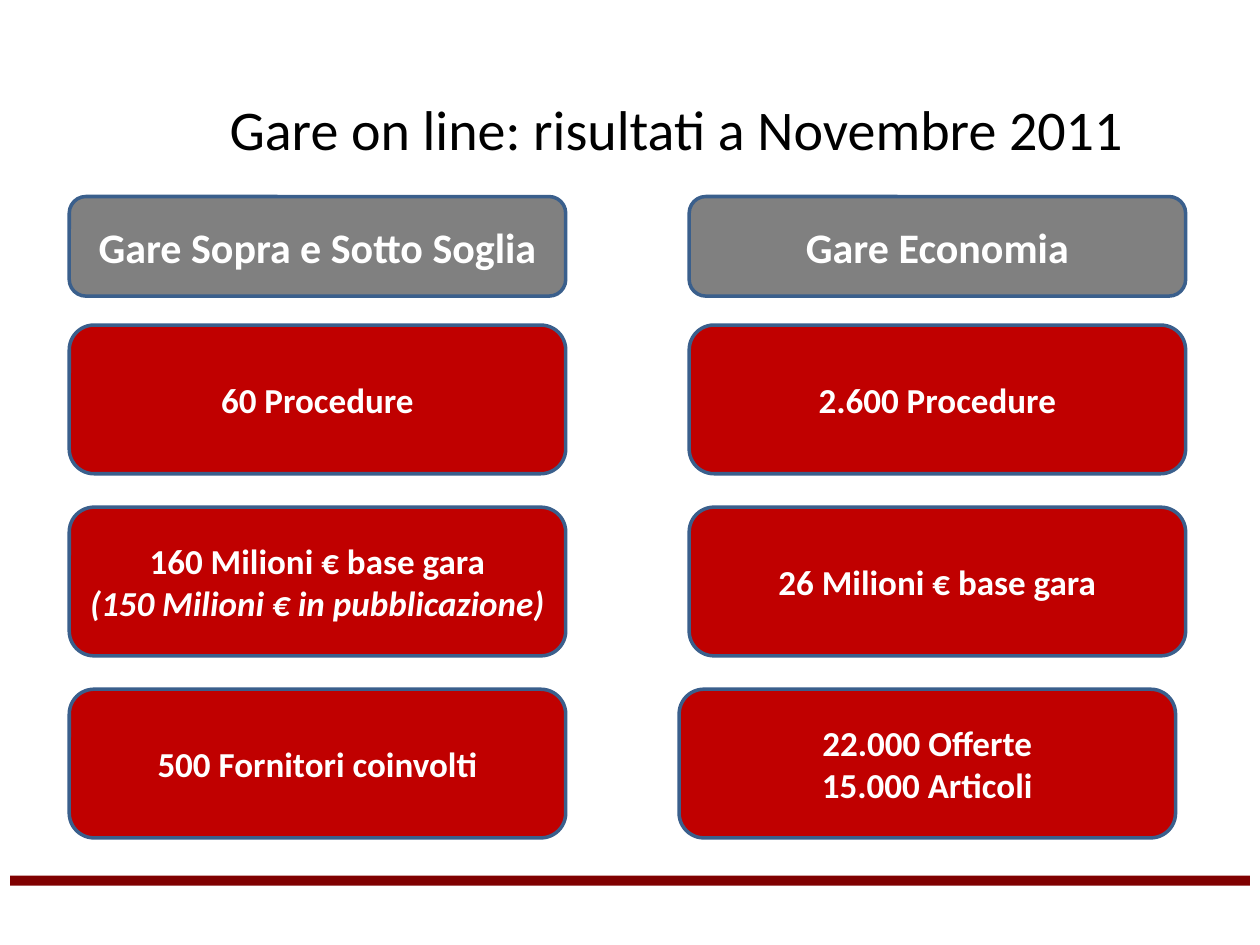
from pptx import Presentation
from pptx.dml.color import RGBColor
from pptx.enum.shapes import MSO_SHAPE
from pptx.enum.text import MSO_ANCHOR, PP_ALIGN
from pptx.util import Inches, Pt

FONT = "Calibri"
WHITE, BLACK, GREY, RED, MAROON, BLUE = (
    "FFFFFF", "000000", "808080", "C00000", "800000", "3A5F8C")
LEFT, COL_STEP, BOX_W = 0.55, 4.92, 3.94
HEAD_TOP, HEAD_H = 1.56, 0.79
ROW_TOP, ROW_BOTTOM, ROW_H = 2.58, 6.65, 1.18
LAST_SHIFT = -0.08

COLUMNS = [
    ("Gare Sopra e Sotto Soglia",
     [["60 Procedure"],
      ["160 Milioni € base gara", "(150 Milioni € in pubblicazione)"],
      ["500 Fornitori coinvolti"]]),
    ("Gare Economia",
     [["2.600 Procedure"],
      ["26 Milioni € base gara"],
      ["22.000 Offerte", "15.000 Articoli"]]),
]


def rgb(value):
    return RGBColor.from_string(value)


class Deck:
    """Holds the slide and draws its elements in one style."""

    def __init__(self, prs):
        self.s = prs.slides.add_slide(prs.slide_layouts[5])

    def set_text(self, tf, lines, size, color, bold=False):
        tf.word_wrap = True
        tf.vertical_anchor = MSO_ANCHOR.MIDDLE
        for i, line in enumerate(lines):
            p = tf.paragraphs[0] if i == 0 else tf.add_paragraph()
            p.text = line
            p.alignment = PP_ALIGN.CENTER
            p.font.name, p.font.size = FONT, Pt(size)
            p.font.bold, p.font.italic = bold, line.startswith("(")
            p.font.color.rgb = rgb(color)

    def title(self, text, x, y, w, h, indent):
        sp = self.s.shapes.title
        sp.left, sp.top, sp.width, sp.height = map(Inches, (x, y, w, h))
        sp.text_frame.margin_left = Inches(indent)
        self.set_text(sp.text_frame, [text], 32, BLACK)

    def shape(self, kind, x, y, w, h, fill):
        sp = self.s.shapes.add_shape(kind, *map(Inches, (x, y, w, h)))
        sp.shadow.inherit = False
        sp.fill.solid()
        sp.fill.fore_color.rgb = rgb(fill)
        return sp

    def rule(self, x, y, w, h):
        self.shape(MSO_SHAPE.RECTANGLE, x, y, w, h, MAROON).line.fill.background()

    def box(self, lines, x, y, h, fill, size):
        sp = self.shape(MSO_SHAPE.ROUNDED_RECTANGLE, x, y, BOX_W, h, fill)
        sp.line.color.rgb = rgb(BLUE)
        sp.line.width = Pt(2)
        self.set_text(sp.text_frame, lines, size, WHITE, bold=True)

    def column(self, col, heading, rows):
        x = LEFT + col * COL_STEP
        self.box([heading], x, HEAD_TOP, HEAD_H, GREY, 24)
        last = len(rows) - 1
        step = (ROW_BOTTOM - ROW_H - ROW_TOP) / last
        for row, lines in enumerate(rows):
            shift = LAST_SHIFT if col and row == last else 0
            self.box(lines, x + shift, ROW_TOP + row * step, ROW_H, RED, 20)


def main():
    prs = Presentation()
    prs.slide_width, prs.slide_height = Inches(10), Inches(7.5)
    deck = Deck(prs)
    deck.rule(0.08, 6.95, 9.84, 0.08)
    deck.title("Gare on line: risultati a Novembre 2011", 0.5, 0.39, 9.27, 1.25, 0.57)
    for col, (heading, rows) in enumerate(COLUMNS):
        deck.column(col, heading, rows)
    prs.save("out.pptx")


if __name__ == "__main__":
    main()
